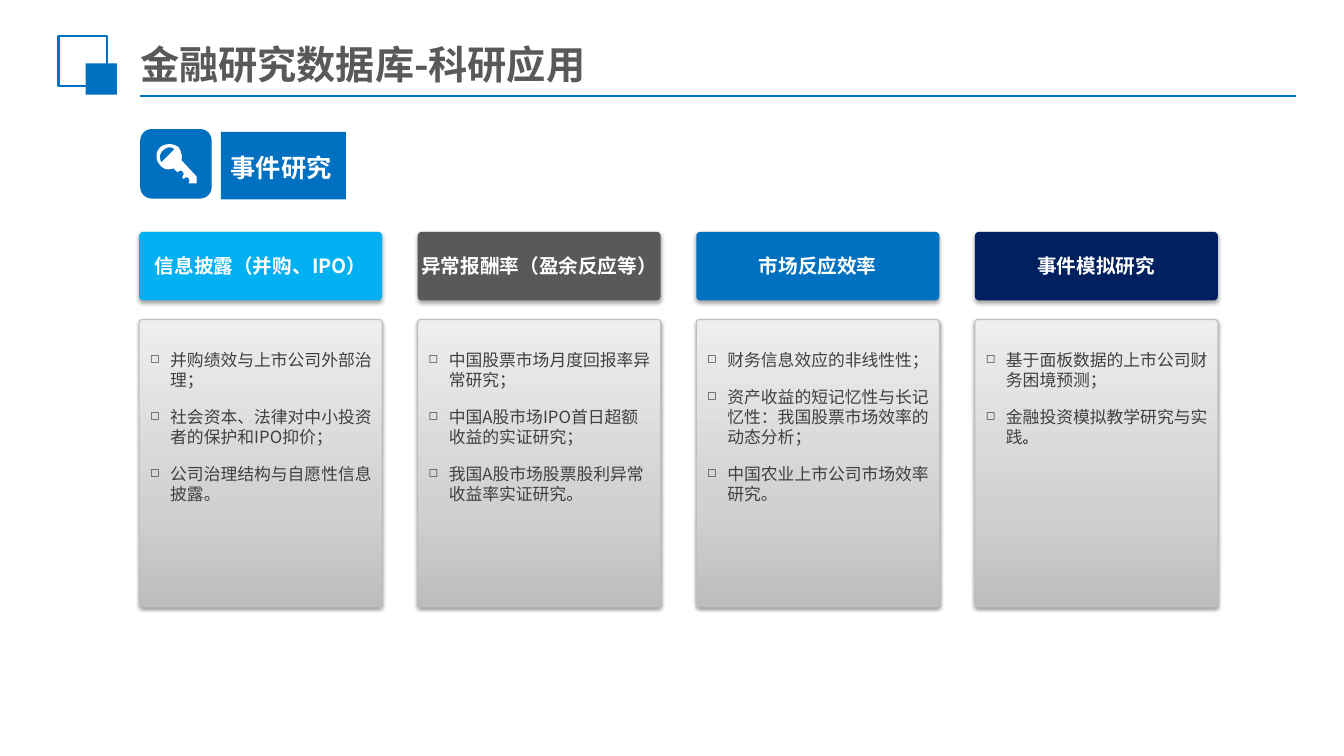
"""Build the slide on event-study applications of a financial research database."""
from pptx import Presentation
from pptx import util as u
from pptx.dml.color import RGBColor
from pptx.enum import shapes, text
from pptx.oxml import parse_xml
from pptx.oxml.ns import nsdecls, qn

COLORS = {
    "blue": "0070C0", "sky": "00B0F0", "gray": "595959", "navy": "002060",
    "white": "FFFFFF", "body": "404040", "border": "BFBFBF", "black": "000000",
}
GRADIENT = [(0, "BDBDBD"), (35, "D1D1D1"), (100, "EEEEEE")]
FONT = "Noto Sans CJK SC"
NS = nsdecls("a")

COLUMNS = [
    ("信息披露（并购、IPO）", "sky",
     ["并购绩效与上市公司外部治理；", "社会资本、法律对中小投资者的保护和IPO抑价；",
      "公司治理结构与自愿性信息披露。"]),
    ("异常报酬率（盈余反应等）", "gray",
     ["中国股票市场月度回报率异常研究；", "中国A股市场IPO首日超额收益的实证研究；",
      "我国A股市场股票股利异常收益率实证研究。"]),
    ("市场反应效率", "blue",
     ["财务信息效应的非线性性；",
      "资产收益的短记忆性与长记忆性：我国股票市场效率的动态分析；",
      "中国农业上市公司市场效率研究。"]),
    ("事件模拟研究", "navy",
     ["基于面板数据的上市公司财务困境预测；", "金融投资模拟教学研究与实践"]),
]

KEY_START = (1.59, 1.46)
KEY_CURVES = [
    (1.54, 1.51, 1.54, 1.59, 1.59, 1.64), (1.62, 1.68, 1.67, 1.69, 1.72, 1.67),
    (1.76, 1.71, 1.76, 1.71, 1.76, 1.71), (1.76, 1.71, 1.79, 1.68, 1.81, 1.70),
    (1.83, 1.72, 1.82, 1.74, 1.81, 1.75), (1.81, 1.76, 1.81, 1.78, 1.83, 1.77),
    (1.83, 1.76, 1.86, 1.75, 1.87, 1.77), (1.89, 1.79, 1.87, 1.82, 1.87, 1.82),
    (1.95, 1.82, 1.95, 1.82, 1.95, 1.82), (1.95, 1.75, 1.95, 1.75, 1.95, 1.75),
    (1.80, 1.59, 1.80, 1.59, 1.80, 1.59), (1.81, 1.55, 1.80, 1.50, 1.77, 1.46),
    (1.72, 1.42, 1.64, 1.42, 1.59, 1.46),
]
HOLE_START = (1.60, 1.61)
HOLE_CURVES = [(1.58, 1.57, 1.58, 1.52, 1.62, 1.49), (1.65, 1.46, 1.70, 1.45, 1.73, 1.48)]


def style_run(run, size, color, bold=False, font=FONT):
    run.font.size = u.Pt(size)
    run.font.bold = bold
    run.font.color.rgb = RGBColor.from_string(COLORS[color])
    run.font.name = font
    run._r.get_or_add_rPr().append(parse_xml(f'<a:ea {NS} typeface="{font}"/>'))


def add_box(kind, box, fill=None, line=None, width=0.75, shadow=None):
    shape = slide.shapes.add_shape(kind, *map(u.Inches, box))
    shape.shadow.inherit = False
    if fill:
        shape.fill.solid()
        shape.fill.fore_color.rgb = RGBColor.from_string(COLORS[fill])
    else:
        shape.fill.background()
    if line:
        shape.line.color.rgb = RGBColor.from_string(COLORS[line])
        shape.line.width = u.Pt(width)
    else:
        shape.line.fill.background()
    if shadow:
        alpha, distance = shadow
        shape._element.spPr.find(qn("a:effectLst")).append(parse_xml(
            f'<a:outerShdw {NS} blurRad="{u.Pt(3.1)}" dist="{u.Pt(distance)}" dir="5400000" '
            f'rotWithShape="0"><a:srgbClr val="000000"><a:alpha val="{alpha * 1000}"/>'
            '</a:srgbClr></a:outerShdw>'))
    return shape


presentation = Presentation()
presentation.slide_width = u.Inches(13.33)
presentation.slide_height = u.Inches(7.5)
slide = presentation.slides.add_slide(presentation.slide_layouts[6])
RECT = shapes.MSO_SHAPE.RECTANGLE
ROUNDED = shapes.MSO_SHAPE.ROUNDED_RECTANGLE

rule = slide.shapes.add_connector(
    shapes.MSO_CONNECTOR.STRAIGHT, *map(u.Inches, (1.39, 0.95, 12.85, 0.95)))
rule.line.color.rgb = RGBColor.from_string(COLORS["blue"])
rule.line.width = u.Pt(1.25)
rule._element.spPr.append(parse_xml(f"<a:effectLst {NS}/>"))
add_box(RECT, (0.58, 0.36, 0.48, 0.49), line="blue", width=1.5)
add_box(RECT, (0.85, 0.63, 0.31, 0.31), "blue")

title = slide.shapes.add_textbox(*map(u.Inches, (1.32, 0.39, 8.6, 0.48)))
frame = title.text_frame
frame.word_wrap = True
frame.vertical_anchor = text.MSO_ANCHOR.MIDDLE
frame.margin_left = frame.margin_right = u.Inches(0.07)
frame.margin_top = frame.margin_bottom = u.Inches(0.04)
frame.text = "金融研究数据库-科研应用"
style_run(frame.paragraphs[0].runs[0], 28, "gray", True)

for index, (heading, color, topics) in enumerate(COLUMNS):
    left = 1.38 + 2.763 * index
    header = add_box(ROUNDED, (left, 2.3, 2.41, 0.68), color, shadow=(35, 1.8))
    header.adjustments[0] = 0.06
    frame = header.text_frame
    frame.word_wrap = False
    frame.vertical_anchor = text.MSO_ANCHOR.MIDDLE
    frame.text = heading
    frame.paragraphs[0].alignment = text.PP_ALIGN.CENTER
    style_run(frame.paragraphs[0].runs[0], 14, "white", True)

    panel = add_box(ROUNDED, (left, 3.17, 2.41, 2.85), line="border", shadow=(38, 1.6))
    panel.adjustments[0] = 0.013
    panel.fill.gradient()
    panel.fill.gradient_angle = 90
    stops = panel._element.spPr.find(".//" + qn("a:gsLst"))
    stops.clear()
    for position, stop_color in GRADIENT:
        stops.append(parse_xml(
            f'<a:gs {NS} pos="{position * 1000}"><a:srgbClr val="{stop_color}"/></a:gs>'))

    topic_list = slide.shapes.add_textbox(*map(u.Inches, (left + 0.01, 3.42, 2.4, 2.06)))
    frame = topic_list.text_frame
    frame.word_wrap = True
    for number, topic in enumerate(topics):
        paragraph = frame.add_paragraph() if number else frame.paragraphs[0]
        paragraph.text = topic
        paragraph.space_before = u.Pt(6 if number else 0)
        paragraph.space_after = u.Pt(6)
        properties = paragraph._p.get_or_add_pPr()
        properties.set("marL", str(u.Inches(0.2)))
        properties.set("indent", str(u.Inches(-0.2)))
        properties.append(parse_xml(f'<a:buSzPct {NS} val="70000"/>'))
        properties.append(parse_xml(f'<a:buChar {NS} char="◻"/>'))
        style_run(paragraph.runs[0], 12, "body")

full_stop = paragraph.add_run()
full_stop.text = "。"
style_run(full_stop, 10.5, "black", font="Arial")

label = add_box(RECT, (2.19, 1.31, 1.24, 0.67), "blue")
frame = label.text_frame
frame.vertical_anchor = text.MSO_ANCHOR.TOP
frame.text = "事件研究"
frame.paragraphs[0].alignment = text.PP_ALIGN.LEFT
frame.paragraphs[0].line_spacing = 1.5
style_run(frame.paragraphs[0].runs[0], 18, "white", True)
add_box(ROUNDED, (1.39, 1.28, 0.71, 0.69), "blue")

builder = slide.shapes.build_freeform(*map(u.Inches, KEY_START), scale=1.0)
for start, curves in ((KEY_START, KEY_CURVES), (HOLE_START, HOLE_CURVES)):
    if start == HOLE_START:
        builder.move_to(*map(u.Inches, start))
    points = []
    x, y = start
    for x1, y1, x2, y2, x3, y3 in curves:
        for step in range(1, 9):
            t = step / 8
            a, b, c, d = (1 - t) ** 3, 3 * t * (1 - t) ** 2, 3 * t * t * (1 - t), t ** 3
            points.append((u.Inches(a * x + b * x1 + c * x2 + d * x3),
                           u.Inches(a * y + b * y1 + c * y2 + d * y3)))
        x, y = x3, y3
    builder.add_line_segments(points, close=True)
key = builder.convert_to_shape()
key.shadow.inherit = False
key.fill.solid()
key.fill.fore_color.rgb = RGBColor.from_string(COLORS["white"])
key.line.fill.background()

presentation.save("out.pptx")
